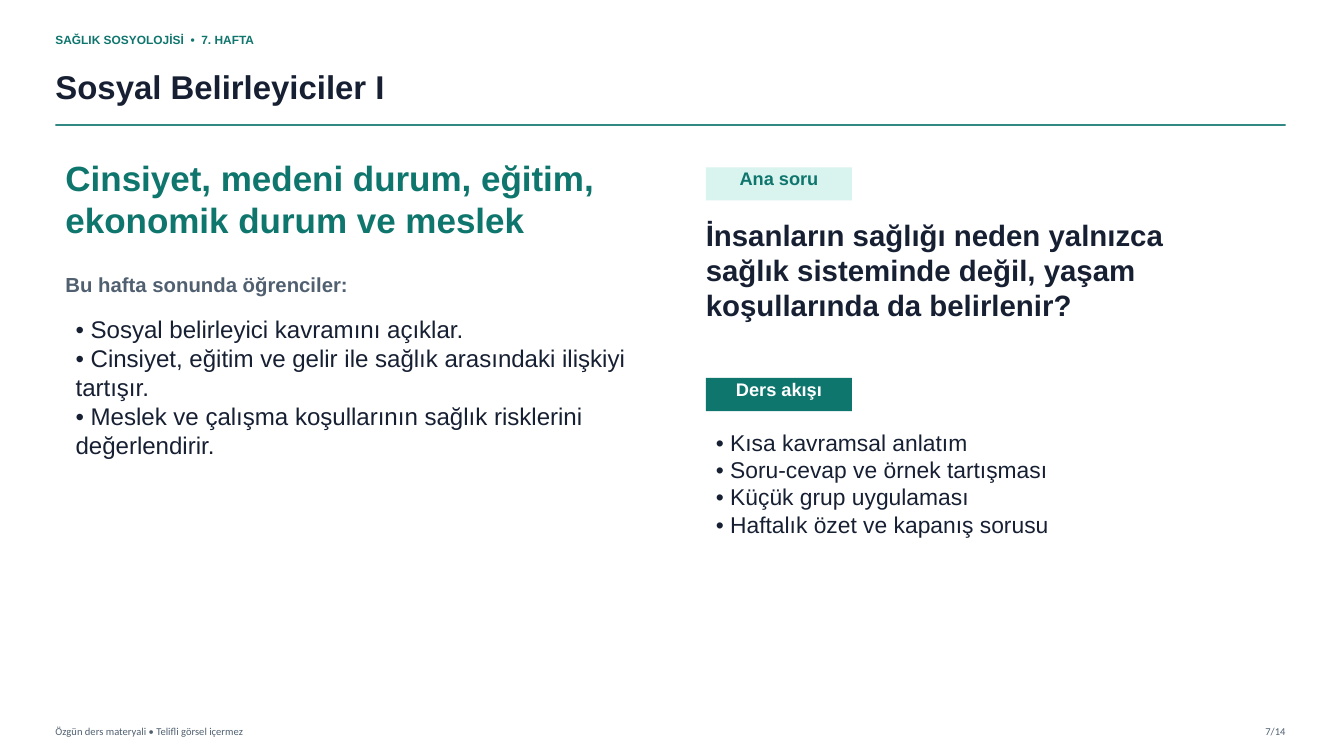
from dataclasses import dataclass

from lxml.etree import SubElement
from pptx import Presentation
from pptx.dml.color import RGBColor
from pptx.enum.shapes import MSO_CONNECTOR as Connector, MSO_SHAPE as Shape
from pptx.enum.text import MSO_ANCHOR as Anchor, PP_ALIGN as Align
from pptx.oxml.ns import qn
from pptx.util import Inches, Pt


@dataclass(frozen=True)
class Theme:
    teal: str = "0F766E"
    mint: str = "D9F3EE"
    ink: str = "172033"
    slate: str = "506070"
    white: str = "FFFFFF"
    body_font: str = "Arial"
    footer_font: str = "Calibri"
    course_size: float = 8.5
    title_size: float = 23.5
    topic_size: float = 25
    lead_size: float = 14.5
    goals_size: float = 17.2
    tag_size: float = 13
    question_size: float = 21
    flow_size: float = 16.3
    footer_size: float = 7.5


class LessonSlide:
    def __init__(self, deck, theme):
        self.theme = theme
        self.slide = deck.slides.add_slide(deck.slide_layouts[6])
        background = self.slide.background.fill
        background.solid()
        background.fore_color.rgb = RGBColor.from_string(theme.white)

    def fill_frame(self, frame, lines, size, color, bold=False, font=None,
                   align=Align.LEFT, anchor=Anchor.TOP):
        frame_format = {
            "word_wrap": True, "vertical_anchor": anchor,
            "margin_left": 0, "margin_top": 0,
            "margin_right": 0, "margin_bottom": 0,
        }
        for name, value in frame_format.items():
            setattr(frame, name, value)
        font_format = {"name": font or self.theme.body_font,
                       "size": Pt(size), "bold": bold}
        for index, line in enumerate(lines):
            paragraph = frame.add_paragraph() if index else frame.paragraphs[0]
            paragraph.alignment = align
            run = paragraph.add_run()
            run.text = line
            for name, value in font_format.items():
                setattr(run.font, name, value)
            run.font.color.rgb = RGBColor.from_string(color)

    def text(self, box, lines, size, color, **style):
        holder = self.slide.shapes.add_textbox(*map(Inches, box))
        self.fill_frame(holder.text_frame, lines, size, color, **style)

    def bullets(self, box, items, size):
        self.text(box, [f"• {item}" for item in items], size, self.theme.ink)

    def footer(self, box, line, align=Align.LEFT):
        theme = self.theme
        self.text(box, [line], theme.footer_size, theme.slate,
                  font=theme.footer_font, align=align, anchor=Anchor.MIDDLE)

    def tag(self, top, label, fill, color):
        tag = self.slide.shapes.add_shape(
            Shape.RECTANGLE, *map(Inches, (7, top, 1.45, 0.33)))
        tag.shadow.inherit = False
        tag.fill.solid()
        tag.fill.fore_color.rgb = RGBColor.from_string(fill)
        tag.line.fill.background()
        self.fill_frame(tag.text_frame, [label], self.theme.tag_size, color,
                        bold=True, align=Align.CENTER)

    def rule(self, left, right, top):
        rule = self.slide.shapes.add_connector(
            Connector.STRAIGHT, *map(Inches, (left, top, right, top)))
        rule.line.width = Pt(1.2)
        rule.line.color.rgb = RGBColor.from_string(self.theme.teal)
        properties = rule.element.find(qn("p:spPr"))
        color = properties.find(".//" + qn("a:srgbClr"))
        SubElement(color, qn("a:alpha"), val="85000")
        SubElement(properties, qn("a:effectLst"))


def main():
    deck = Presentation()
    deck.slide_width, deck.slide_height = Inches(13.33), Inches(7.5)
    theme = Theme()
    lesson = LessonSlide(deck, theme)

    lesson.text((0.55, 0.25, 3.6, 0.28), ["SAĞLIK SOSYOLOJİSİ  •  7. HAFTA"],
                theme.course_size, theme.teal, bold=True, anchor=Anchor.MIDDLE)
    lesson.text((0.55, 0.58, 11.95, 0.55), ["Sosyal Belirleyiciler I"],
                theme.title_size, theme.ink, bold=True, anchor=Anchor.MIDDLE)
    lesson.rule(0.55, 12.75, 1.24)
    lesson.footer((0.55, 7.14, 6, 0.22),
                  "Özgün ders materyali • Telifli görsel içermez")
    lesson.footer((12.1, 7.14, 0.65, 0.22), "7/14", Align.RIGHT)

    lesson.text((0.65, 1.55, 5.3, 0.95),
                ["Cinsiyet, medeni durum, eğitim, ekonomik durum ve meslek"],
                theme.topic_size, theme.teal, bold=True)
    lesson.text((0.65, 2.7, 4.9, 0.3), ["Bu hafta sonunda öğrenciler:"],
                theme.lead_size, theme.slate, bold=True)
    lesson.bullets((0.75, 3.12, 5.5, 2), [
        "Sosyal belirleyici kavramını açıklar.",
        "Cinsiyet, eğitim ve gelir ile sağlık arasındaki ilişkiyi tartışır.",
        "Meslek ve çalışma koşullarının sağlık risklerini değerlendirir.",
    ], theme.goals_size)

    lesson.tag(1.66, "Ana soru", theme.mint, theme.teal)
    lesson.text((7, 2.15, 5.35, 1.1),
                ["İnsanların sağlığı neden yalnızca sağlık sisteminde değil, "
                 "yaşam koşullarında da belirlenir?"],
                theme.question_size, theme.ink, bold=True)
    lesson.tag(3.75, "Ders akışı", theme.teal, theme.white)
    lesson.bullets((7.1, 4.25, 5.35, 1.55), [
        "Kısa kavramsal anlatım",
        "Soru-cevap ve örnek tartışması",
        "Küçük grup uygulaması",
        "Haftalık özet ve kapanış sorusu",
    ], theme.flow_size)

    deck.save("out.pptx")


if __name__ == "__main__":
    main()
